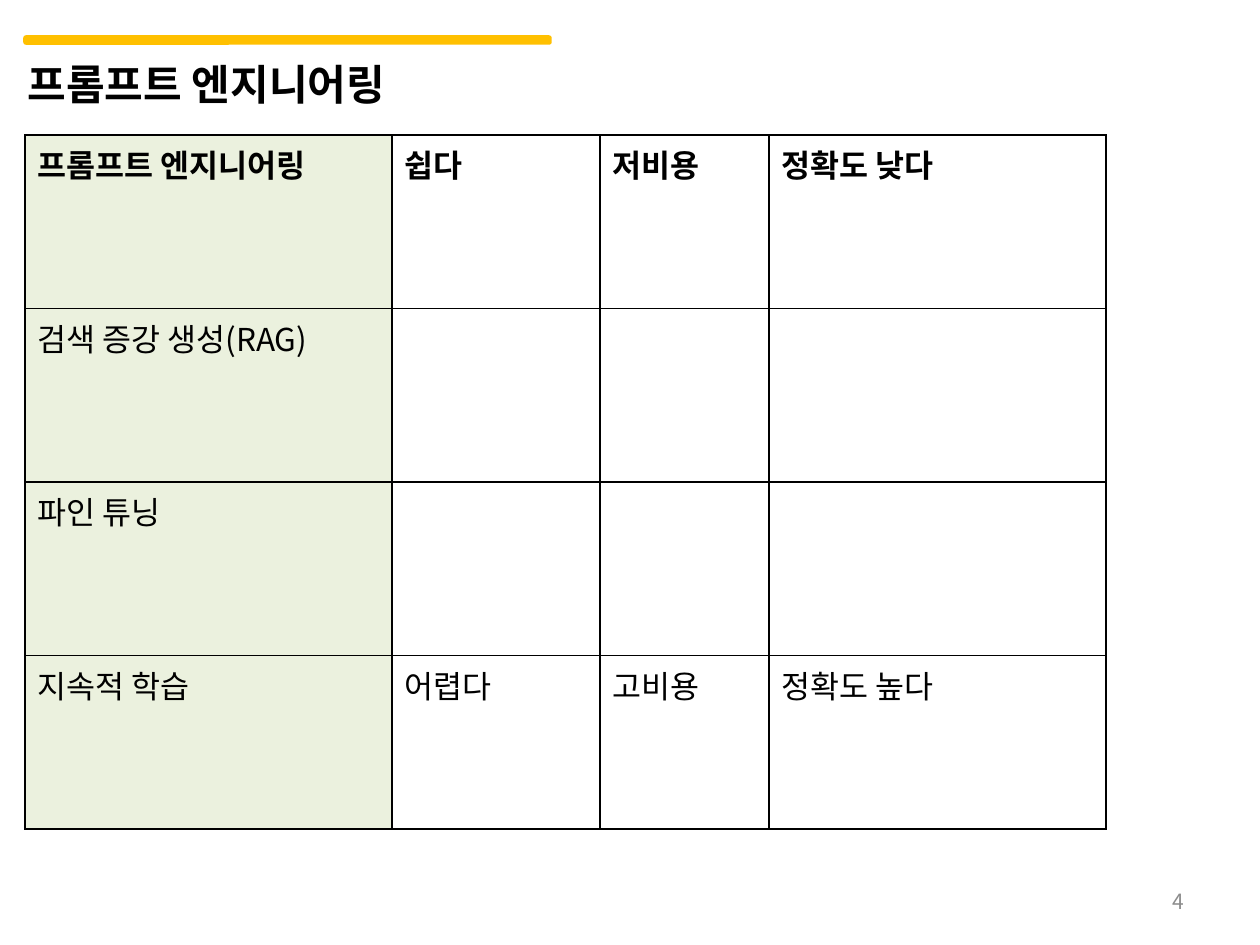
from dataclasses import dataclass

from lxml.etree import SubElement
from pptx import Presentation
from pptx.dml.color import RGBColor
from pptx.enum.shapes import MSO_SHAPE
from pptx.enum.text import MSO_ANCHOR, PP_ALIGN
from pptx.oxml.ns import qn
from pptx.util import Emu, Pt


@dataclass(frozen=True)
class Theme:
    font: str = "Noto Sans CJK KR"
    ink: str = "000000"
    muted: str = "8C8C8C"
    accent: str = "FFC000"
    label_fill: str = "EBF1DE"
    cell_fill: str = "FFFFFF"
    title_size: int = 24
    table_size: int = 18
    number_size: int = 12
    border: int = 1


THEME = Theme()
COLUMNS = [367, 208, 169, 337]
ROWS = [
    ["프롬프트 엔지니어링", "쉽다", "저비용", "정확도 낮다"],
    ["검색 증강 생성(RAG)", "", "", ""],
    ["파인 튜닝", "", "", ""],
    ["지속적 학습", "어렵다", "고비용", "정확도 높다"],
]


def px(n):
    return Emu(round(n * 914400 / 126))


def rgb(value):
    return RGBColor.from_string(value)


def write(tf, text, size, color, bold=False, align=PP_ALIGN.LEFT):
    p = tf.paragraphs[0]
    p.text = text
    p.alignment = align
    font = p.font
    font.size, font.bold, font.name = Pt(size), bold, THEME.font
    font.color.rgb = rgb(color)
    SubElement(font._element, qn("a:ea"), typeface=THEME.font)


def add_heading(s, x, y, w, h):
    bar = s.shapes.add_shape(MSO_SHAPE.ROUNDED_RECTANGLE, px(x + 10), px(y), px(w - 21), px(6))
    bar.shadow.inherit = False
    bar.fill.solid()
    bar.fill.fore_color.rgb = bar.line.color.rgb = rgb(THEME.accent)
    bar.line.width = Pt(2)
    title = s.shapes.title
    title.left, title.top, title.width, title.height = px(x), px(y + 15), px(w), px(h - 15)
    tf = title.text_frame
    tf.word_wrap = True
    tf.vertical_anchor = MSO_ANCHOR.TOP
    write(tf, "프롬프트 엔지니어링", THEME.title_size, THEME.ink, True)


def set_borders(cell):
    tcPr = cell._tc.get_or_add_tcPr()
    for side in ("lnL", "lnR", "lnT", "lnB"):
        ln = SubElement(tcPr, qn(f"a:{side}"), w=str(Pt(THEME.border)))
        fill = SubElement(ln, qn("a:solidFill"))
        SubElement(fill, qn("a:srgbClr"), val=THEME.ink)


def add_comparison(s, x, y, w, h):
    frame = s.shapes.add_table(len(ROWS), len(COLUMNS), px(x), px(y), px(w), px(h))
    table = frame.table
    for column, width in zip(table.columns, COLUMNS):
        column.width = px(width * w / sum(COLUMNS))
    for i, texts in enumerate(ROWS):
        table.rows[i].height = px(h / len(ROWS))
        for j, text in enumerate(texts):
            cell = table.cell(i, j)
            set_borders(cell)
            cell.fill.solid()
            cell.fill.fore_color.rgb = rgb(THEME.cell_fill if j else THEME.label_fill)
            write(cell.text_frame, text, THEME.table_size, THEME.ink, i == 0)


def add_number(s, x, y, w, h):
    tf = s.shapes.add_textbox(px(x), px(y), px(w), px(h)).text_frame
    tf.word_wrap = True
    tf.vertical_anchor = MSO_ANCHOR.MIDDLE
    write(tf, "4", THEME.number_size, THEME.muted, align=PP_ALIGN.RIGHT)


def main():
    prs = Presentation()
    prs.slide_width, prs.slide_height = px(1260), px(945)
    s = prs.slides.add_slide(prs.slide_layouts[5])
    add_heading(s, 15, 37, 546, 78)
    add_comparison(s, 25, 135, 1081, 694)
    add_number(s, 903, 876, 294, 50)
    prs.save("out.pptx")


if __name__ == "__main__":
    main()
